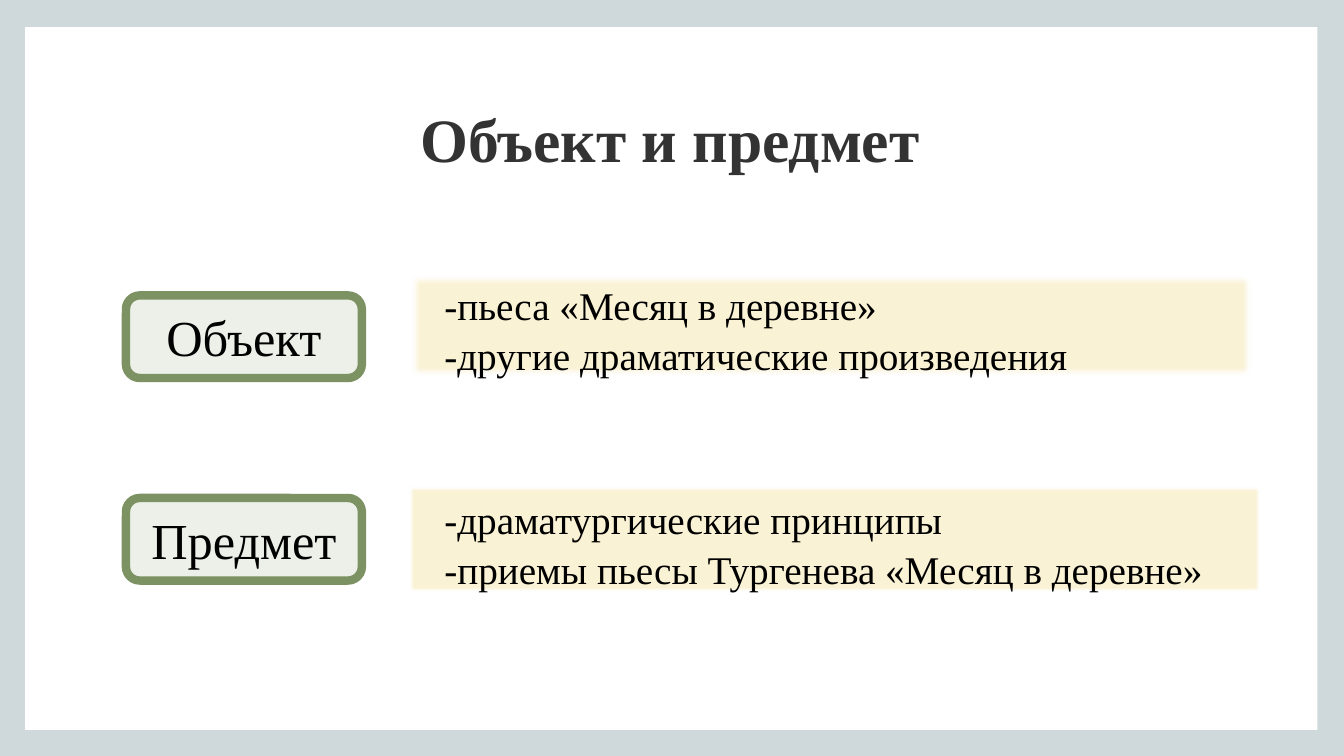
from lxml import etree
from pptx import Presentation
from pptx import util as u
from pptx.dml import color
from pptx.enum import shapes, text
from pptx.oxml import ns

Pt = u.Pt
FONT = "Times New Roman"
COLORS = {
    "frame": "CFD8DB",
    "page": "FFFFFF",
    "title": "333333",
    "ink": "000000",
    "cream": "FAF2D4",
    "pale": "EDF0E9",
    "green": "7D9263",
}


def rgb(name):
    return color.RGBColor.from_string(COLORS[name])


def write(shape, lines, size, tint="ink", bold=False, align=text.PP_ALIGN.CENTER,
          anchor=text.MSO_ANCHOR.MIDDLE, fit=text.MSO_AUTO_SIZE.NONE,
          space=1.0, indent=0):
    frame = shape.text_frame
    frame.word_wrap = True
    frame.auto_size = fit
    frame.vertical_anchor = anchor
    frame.text = "\n".join(lines)
    for para in frame.paragraphs:
        para.alignment = align
        para.line_spacing = space
        if indent:
            props = para._p.get_or_add_pPr()
            props.set("marL", "0")
            props.set("indent", str(Pt(indent)))
        font = para.runs[0].font
        font.name, font.size, font.bold = FONT, Pt(size), bold
        font.color.rgb = rgb(tint)


def place(shape, left, top, width, height):
    shape.left, shape.top = Pt(left), Pt(top)
    shape.width, shape.height = Pt(width), Pt(height)


def block(slide, kind, box, fill, line=None):
    shape = slide.shapes.add_shape(kind, *map(Pt, box))
    shape.shadow.inherit = False
    shape.fill.solid()
    shape.fill.fore_color.rgb = rgb(fill)
    if line:
        shape.line.color.rgb = rgb(line)
        shape.line.width = Pt(6)
    else:
        shape.line.fill.background()
    return shape


def soften(shape, edge):
    effects = shape._element.spPr.find(ns.qn("a:effectLst"))
    etree.SubElement(effects, ns.qn("a:softEdge"), rad=str(Pt(edge)))


def panel(slide, box, lines, edge):
    shape = block(slide, shapes.MSO_SHAPE.RECTANGLE, box, "cream")
    soften(shape, edge)
    write(shape, lines, 28, align=text.PP_ALIGN.LEFT, anchor=text.MSO_ANCHOR.TOP,
          fit=text.MSO_AUTO_SIZE.SHAPE_TO_FIT_TEXT, space=1.07, indent=18)


def label(slide, top, word):
    box = (90, top, 168.5, 59)
    shape = block(slide, shapes.MSO_SHAPE.ROUNDED_RECTANGLE, box, "pale", "green")
    write(shape, [word], 36)


def main():
    deck = Presentation()
    deck.slide_width, deck.slide_height = Pt(960), Pt(540)
    slide = deck.slides.add_slide(deck.slide_layouts[5])
    back = slide.background.fill
    back.solid()
    back.fore_color.rgb = rgb("frame")

    page = block(slide, shapes.MSO_SHAPE.RECTANGLE, (18, 19.4, 923, 502), "page")
    title = slide.shapes.title
    title._element.addprevious(page._element)
    place(title, 90, 48.2, 777.6, 106.6)
    write(title, ["Объект и предмет"], 44, tint="title", bold=True, space=0.9)

    panel(slide, (292.3, 195.1, 602.6, 74.9),
          ["-пьеса «Месяц в деревне»", "-другие драматические произведения"], 5)
    panel(slide, (292.3, 347.8, 607.7, 74.9),
          ["-драматургические принципы",
           "-приемы пьесы Тургенева «Месяц в деревне»"], 2.5)
    label(slide, 211, "Объект")
    label(slide, 355.7, "Предмет")
    deck.save("out.pptx")


if __name__ == "__main__":
    main()
